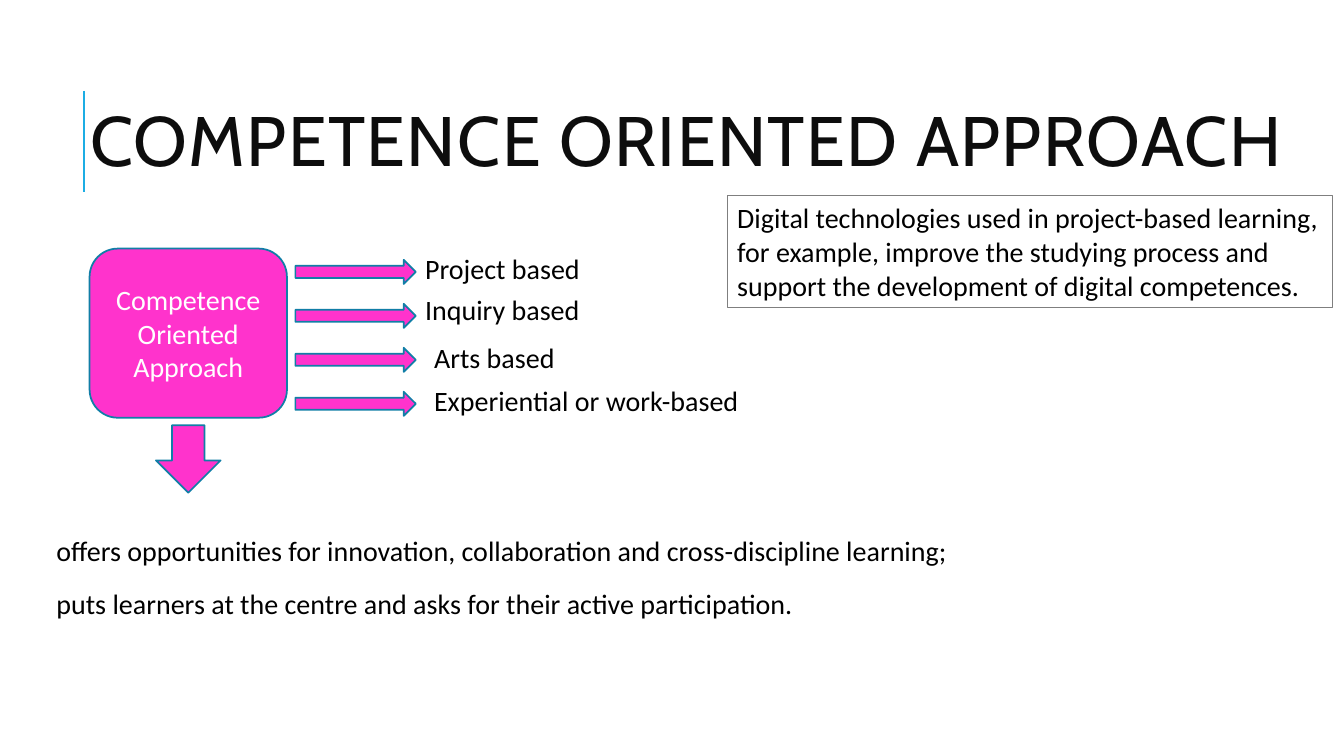
from lxml.etree import SubElement
from pptx import Presentation
from pptx.dml.color import RGBColor
from pptx.enum.shapes import MSO_CONNECTOR, MSO_SHAPE
from pptx.enum.text import MSO_ANCHOR, PP_ALIGN
from pptx.oxml.ns import qn
from pptx.util import Pt

COLORS = {
    "pink": "FF33CC",
    "edge": "117EA7",
    "rule": "1CADE4",
    "frame": "7F7F7F",
    "title": "0D0D0D",
    "text": "000000",
    "white": "FFFFFF",
}


def rgb(name):
    return RGBColor.from_string(COLORS[name])


class Deck:
    """Style and current slide; all lengths are in points."""

    def __init__(self, slide):
        self.slide = slide
        self.font = "Calibri"
        self.size = 20

    def fill_text(self, shape, lines, color="text", align=PP_ALIGN.LEFT,
                  font=None, size=None):
        frame = shape.text_frame
        frame.word_wrap = True
        frame.text = "\n".join(lines)
        for par in frame.paragraphs:
            par.alignment = align
            par.font.name = font or self.font
            par.font.size = Pt(size or self.size)
            par.font.color.rgb = rgb(color)
        return frame

    def label(self, box, *lines, **style):
        shape = self.slide.shapes.add_textbox(*map(Pt, box))
        return self.fill_text(shape, lines, **style)

    def shape(self, kind, box, fill="pink", edge="edge", width=1.25):
        shape = self.slide.shapes.add_shape(kind, *map(Pt, box))
        shape.shadow.inherit = False
        if fill:
            shape.fill.solid()
            shape.fill.fore_color.rgb = rgb(fill)
        else:
            shape.fill.background()
        shape.line.color.rgb = rgb(edge)
        shape.line.width = Pt(width)
        return shape

    def rule(self, *ends):
        line = self.slide.shapes.add_connector(
            MSO_CONNECTOR.STRAIGHT, *map(Pt, ends))
        line.line.color.rgb = rgb("rule")
        line.line.width = Pt(1.5)
        SubElement(line._element.spPr, qn("a:effectLst"))


def main():
    show = Presentation()
    show.slide_width, show.slide_height = Pt(960), Pt(540)
    deck = Deck(show.slides.add_slide(show.slide_layouts[6]))

    deck.rule(60, 65, 60, 137)
    title = deck.label((57.6, 50.4, 872, 108), "COMPETENCE ORIENTED APPROACH",
                       color="title", font="Cabin", size=50)
    title.vertical_anchor = MSO_ANCHOR.MIDDLE
    head = title.paragraphs[0]
    head.line_spacing = 0.8
    head.runs[0]._r.get_or_add_rPr().set("spc", "100")

    card = deck.shape(MSO_SHAPE.ROUNDED_RECTANGLE, (64, 177.6, 141, 120.8))
    frame = deck.fill_text(card, ["Competence Oriented Approach"],
                           color="white", align=PP_ALIGN.CENTER)
    frame.vertical_anchor = MSO_ANCHOR.MIDDLE
    deck.shape(MSO_SHAPE.DOWN_ARROW, (111.4, 303.8, 46.2, 48.2))

    methods = [
        ("Project based", 296.6, 176.4),
        ("Inquiry based", 296.6, 205.4),
        ("Arts based", 303, 240),
        ("Experiential or work-based", 303, 270.3),
    ]
    for row, (name, left, top) in enumerate(methods):
        deck.shape(MSO_SHAPE.RIGHT_ARROW, (211, 185.6 + 31.4 * row, 86, 17.2))
        deck.label((left, top, 235, 31.5), name)

    gains = deck.label(
        (29.5, 377.3, 816.5, 90.7),
        "offers opportunities for innovation, collaboration and "
        "cross-discipline learning;",
        "puts learners at the centre and asks for their active participation.")
    gains.margin_left = Pt(10.8)
    gains.margin_top = Pt(3.6)
    gains.paragraphs[1].space_before = Pt(14)

    note = deck.shape(MSO_SHAPE.RECTANGLE, (519.5, 139.5, 432.5, 80),
                      fill=None, edge="frame", width=0.75)
    deck.fill_text(note, [
        "Digital technologies used in project-based learning, for example, "
        "improve the studying process and support the development of "
        "digital competences."])

    show.save("out.pptx")


if __name__ == "__main__":
    main()
